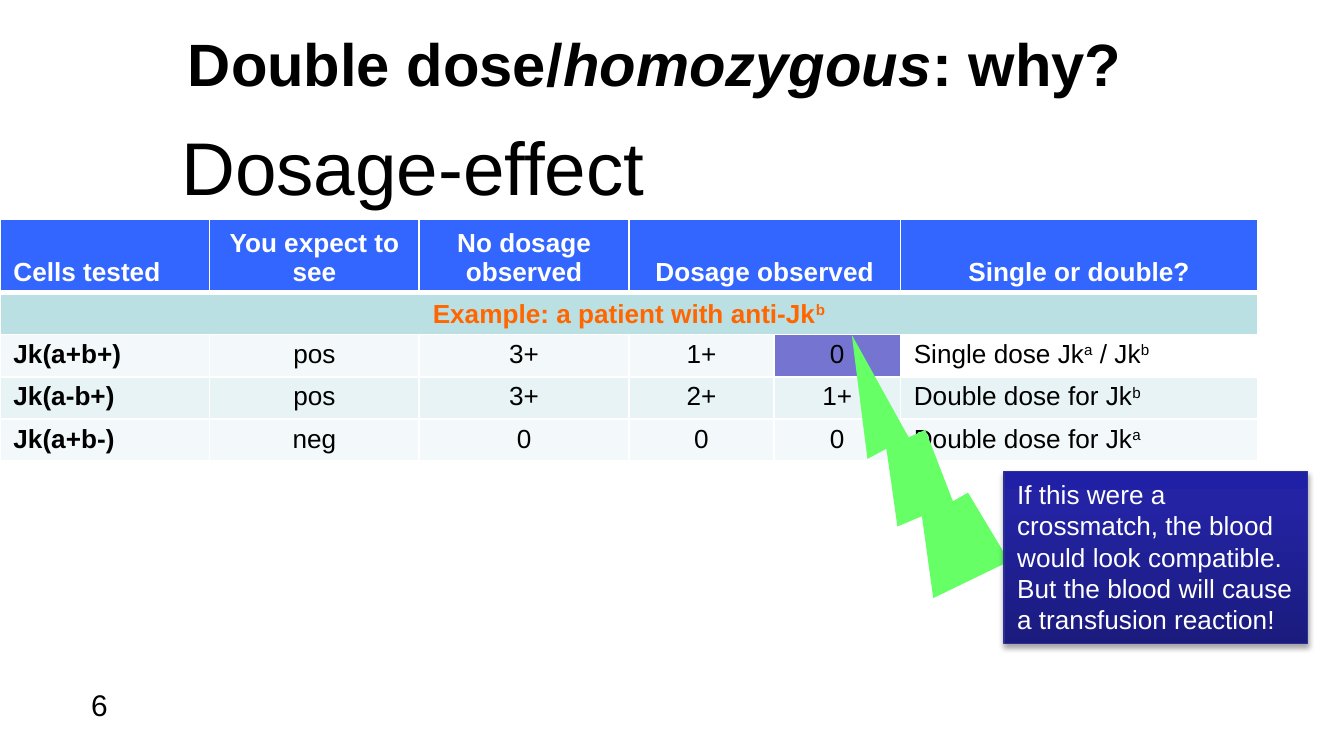
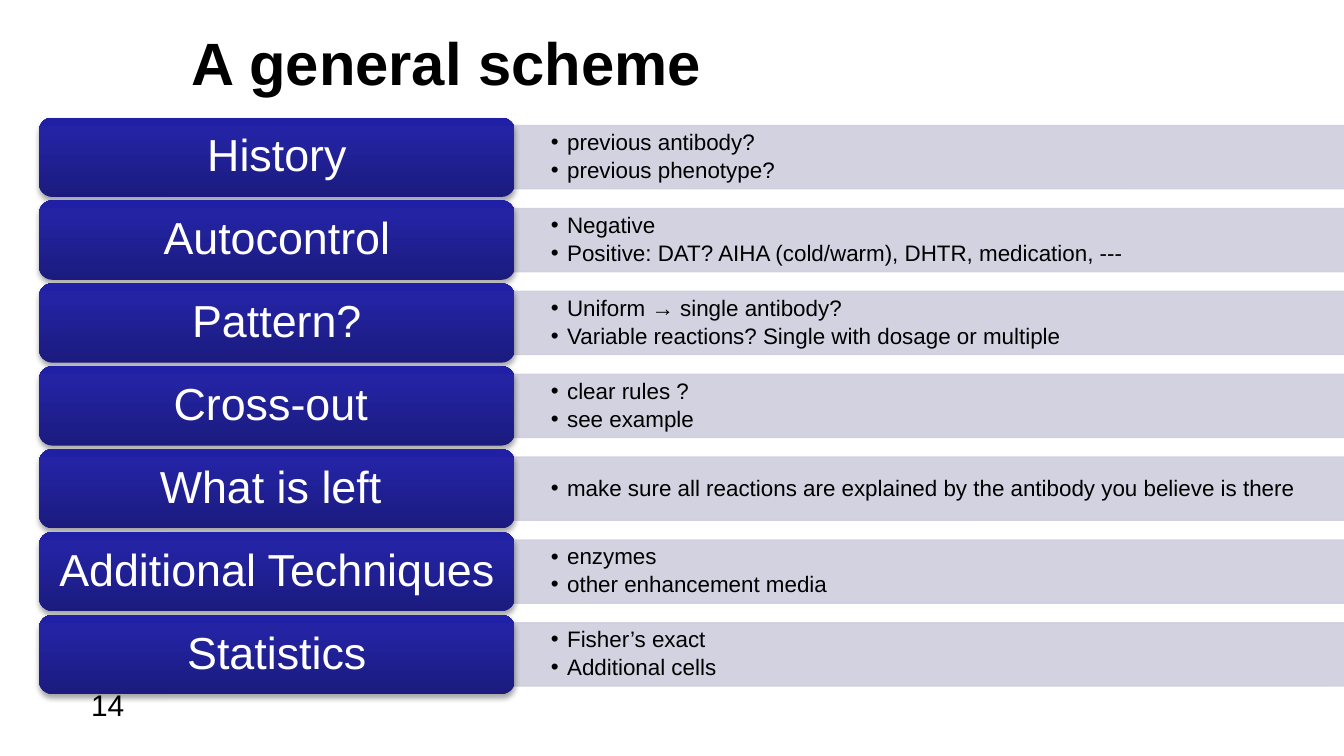
from lxml import etree
from pptx import Presentation, util as u
from pptx.dml.color import RGBColor
from pptx.enum import shapes, text
from pptx.oxml import ns

FONT = "Arial"
BLACK, WHITE = "000000", "FFFFFF"
HEADER_BLUE, BAND_TEAL, ORANGE = "3366FF", "BBE0E3", "FF6600"
ROW_LIGHT, ROW_DARK, HIGHLIGHT = "F3F9FA", "E7F3F4", "7575D1"
BOLT_GREEN, BAR_GREY, PANEL_LINE = "66FF66", "CECEDE", "2F2F98"
PANEL_STOPS = [(0, "1B1B7E"), (80, "2323A3"), (100, "2020A6")]

COLUMN_WIDTHS = [1.56, 1.56, 1.56, 1.08, 0.94, 2.66]
ROW_HEIGHTS = [0.52, 0.3, 0.3, 0.3, 0.3]
# Text between carets is superscript; an empty string is part of a merged cell.
DOSAGE_ROWS = [
    ["Cells tested", "You expect to see", "No dosage observed", "Dosage observed", "", "Single or double?"],
    ["Example: a patient with anti-Jk^b^", "", "", "", "", ""],
    ["Jk(a+b+)", "pos", "3+", "1+", "0", "Single dose Jk^a^ / Jk^b^"],
    ["Jk(a-b+)", "pos", "3+", "2+", "1+", "Double dose for Jk^b^"],
    ["Jk(a+b-)", "neg", "0", "0", "0", "Double dose for Jk^a^"],
]

SCHEME = [
    ("History", ["previous antibody?", "previous phenotype?"]),
    ("Autocontrol", ["Negative", "Positive: DAT? AIHA (cold/warm), DHTR, medication, ---"]),
    ("Pattern?", ["Uniform → single antibody?", "Variable reactions? Single with dosage or multiple"]),
    ("Cross-out ", ["clear rules ?", "see example"]),
    ("What is left ", ["make sure all reactions are explained by the antibody you believe is there"]),
    ("Additional Techniques", ["enzymes", "other enhancement media"]),
    ("Statistics", ["Fisher’s exact", "Additional cells"]),
]


def rgb(value):
    return RGBColor.from_string(value)


def add_element(parent, tag, **attributes):
    element = etree.SubElement(parent, ns.qn(tag))
    for name, value in attributes.items():
        element.set(name, str(value))
    return element


def add_run(paragraph, words, size, color=BLACK, bold=False):
    run = paragraph.add_run()
    run.text = words
    font = run.font
    font.name, font.size, font.bold = FONT, u.Pt(size), bold
    font.color.rgb = rgb(color)
    return run


def add_marked_runs(paragraph, words, size, color, bold):
    """Add runs, raising the parts enclosed in carets."""
    for index, part in enumerate(words.split("^")):
        if part:
            run = add_run(paragraph, part, size, color, bold)
            if index % 2:
                run.font._element.set("baseline", "30000")


def add_text_box(slide, left, top, width, height, anchor=text.MSO_ANCHOR.TOP):
    box = slide.shapes.add_textbox(*map(u.Inches, (left, top, width, height)))
    frame = box.text_frame
    frame.word_wrap = True
    frame.vertical_anchor = anchor
    return frame


def add_title(slide, left, top, width, height, parts):
    """Add a bold title; every second part is italic."""
    frame = add_text_box(slide, left, top, width, height, text.MSO_ANCHOR.MIDDLE)
    for index, part in enumerate(parts):
        run = add_run(frame.paragraphs[0], part, 32, bold=True)
        run.font.italic = index % 2 == 1


def add_label(slide, left, top, width, height, words, size):
    frame = add_text_box(slide, left, top, width, height)
    frame.auto_size = text.MSO_AUTO_SIZE.SHAPE_TO_FIT_TEXT
    add_run(frame.paragraphs[0], words, size)


def add_slide(presentation, number):
    slide = presentation.slides.add_slide(presentation.slide_layouts[6])
    add_label(slide, 0.58, 5.06, 1.92, 0.37, number, 16)
    return slide


def add_plain_shape(slide, kind, left, top, width, height, color):
    shape = slide.shapes.add_shape(kind, *map(u.Inches, (left, top, width, height)))
    shape.shadow.inherit = False
    shape.fill.solid()
    shape.fill.fore_color.rgb = rgb(color)
    shape.line.fill.background()
    return shape


def add_panel(slide, kind, left, top, width, height):
    """Add a dark blue gradient shape with a soft shadow below it."""
    shape = add_plain_shape(slide, kind, left, top, width, height, PANEL_STOPS[0][1])
    shape.fill.gradient()
    shape.fill.gradient_angle = 90
    properties = shape._element.spPr
    stops = properties.find(".//" + ns.qn("a:gsLst"))
    for stop in list(stops):
        stops.remove(stop)
    for position, color in PANEL_STOPS:
        stop = add_element(stops, "a:gs", pos=position * 1000)
        add_element(stop, "a:srgbClr", val=color)
    shadow = add_element(properties.find(ns.qn("a:effectLst")), "a:outerShdw",
                         blurRad=u.Pt(3.1), dist=u.Pt(1.8), dir=5400000, rotWithShape=0)
    add_element(add_element(shadow, "a:srgbClr", val=BLACK), "a:alpha", val=35000)
    shape.text_frame.word_wrap = True
    return shape


def set_borders(cell, row):
    """Draw white borders, heavier under the header row."""
    properties = cell._tc.get_or_add_tcPr()
    heavy = {0: "a:lnB", 1: "a:lnT"}.get(row)
    for index, tag in enumerate(("a:lnL", "a:lnR", "a:lnT", "a:lnB")):
        line = etree.Element(ns.qn(tag), w=str(u.Pt(3 if tag == heavy else 1)))
        add_element(add_element(line, "a:solidFill"), "a:srgbClr", val=WHITE)
        properties.insert(index, line)


def cell_fill(row, column):
    if row < 2:
        return (HEADER_BLUE, BAND_TEAL)[row]
    if row == 2 and column >= 4:
        return HIGHLIGHT if column == 4 else None
    return ROW_DARK if row == 3 else ROW_LIGHT


def format_cell(cell, row, column, words):
    color = cell_fill(row, column)
    if color:
        cell.fill.solid()
        cell.fill.fore_color.rgb = rgb(color)
    else:
        cell.fill.background()
    set_borders(cell, row)
    cell.margin_left = cell.margin_right = u.Inches(0.1)
    cell.margin_top = cell.margin_bottom = u.Inches(0.04)
    cell.vertical_anchor = text.MSO_ANCHOR.BOTTOM if row < 2 else text.MSO_ANCHOR.TOP
    paragraph = cell.text_frame.paragraphs[0]
    left_aligned = row != 1 and (column == 0 or (column == 5 and row > 1))
    paragraph.alignment = text.PP_ALIGN.LEFT if left_aligned else text.PP_ALIGN.CENTER
    text_color = (WHITE, ORANGE)[row] if row < 2 else BLACK
    paragraph.font.size = u.Pt(14)
    add_marked_runs(paragraph, words, 14, text_color, row < 2 or column == 0)


def add_dosage_table(slide):
    frame = slide.shapes.add_table(
        len(ROW_HEIGHTS), len(COLUMN_WIDTHS), u.Inches(0), u.Inches(1.63),
        u.Inches(9.37), u.Inches(1.77))
    table = frame.table
    for column, width in zip(table.columns, COLUMN_WIDTHS):
        column.width = u.Inches(width)
    for row, height in zip(table.rows, ROW_HEIGHTS):
        row.height = u.Inches(height)
    for row, values in enumerate(DOSAGE_ROWS):
        for column, words in enumerate(values):
            format_cell(table.cell(row, column), row, column, words)
    table.cell(0, 3).merge(table.cell(0, 4))
    table.cell(1, 0).merge(table.cell(1, 5))


def add_bolt(slide):
    bolt = add_plain_shape(slide, shapes.MSO_SHAPE.LIGHTNING_BOLT, 6.11, 2.62, 1.35, 1.88, BOLT_GREEN)
    bolt.rotation = 121.6
    bolt._element.spPr.xfrm.set("flipH", "1")


def add_warning(slide):
    panel = add_panel(slide, shapes.MSO_SHAPE.RECTANGLE, 7.47, 3.51, 2.26, 1.28)
    panel.line.color.rgb = rgb(PANEL_LINE)
    panel.line.width = u.Pt(0.75)
    frame = panel.text_frame
    frame.vertical_anchor = text.MSO_ANCHOR.TOP
    sentences = ["If this were a crossmatch, the blood would look compatible.",
                 "But the blood will cause a transfusion reaction!"]
    for index, sentence in enumerate(sentences):
        paragraph = frame.add_paragraph() if index else frame.paragraphs[0]
        paragraph.alignment = text.PP_ALIGN.LEFT
        add_run(paragraph, sentence, 14, WHITE)


def add_bar(slide, middle):
    """Add a pale bar, turned so that its rounded corners face right."""
    length, thickness = 6.29, 0.47
    bar = add_plain_shape(slide, shapes.MSO_SHAPE.ROUND_2_SAME_RECTANGLE,
                          6.74, middle - length / 2, thickness, length, BAR_GREY)
    bar.rotation = 90
    bar.line.color.rgb = rgb(BAR_GREY)
    bar.line.width = u.Pt(0.75)
    for color in bar._element.spPr.iter(ns.qn("a:srgbClr")):
        add_element(color, "a:alpha", val=90000)


def add_bullets(slide, middle, points):
    height = 0.42
    frame = add_text_box(slide, 3.83, middle - height / 2, 6.27, height, text.MSO_ANCHOR.MIDDLE)
    frame.margin_left = frame.margin_right = u.Inches(0.27)
    frame.margin_top = frame.margin_bottom = u.Inches(0.14)
    for index, point in enumerate(points):
        paragraph = frame.add_paragraph() if index else frame.paragraphs[0]
        paragraph.level = 1
        paragraph.line_spacing = 0.9
        paragraph.space_after = u.Pt(2)
        properties = paragraph._p.get_or_add_pPr()
        properties.set("marL", str(u.Inches(0.12)))
        properties.set("indent", str(-u.Inches(0.12)))
        add_element(properties, "a:buFont", typeface=FONT)
        add_element(properties, "a:buChar", char="•")
        paragraph.font.size = u.Pt(12)
        add_run(paragraph, point, 12)


def add_step(slide, middle, name):
    height = 0.59
    button = add_panel(slide, shapes.MSO_SHAPE.ROUNDED_RECTANGLE, 0.29, middle - height / 2, 3.54, height)
    button.text_frame.vertical_anchor = text.MSO_ANCHOR.MIDDLE
    paragraph = button.text_frame.paragraphs[0]
    paragraph.alignment = text.PP_ALIGN.CENTER
    paragraph.line_spacing = 0.9
    add_run(paragraph, name, 24, WHITE)


def build_dosage_slide(presentation):
    slide = add_slide(presentation, "6")
    add_title(slide, 1.3, 0.2, 8.43, 0.53, ["Double dose/", "homozygous", ": why?"])
    add_label(slide, 1.25, 0.85, 3.86, 0.77, "Dosage-effect", 40)
    add_dosage_table(slide)
    add_bolt(slide)
    add_warning(slide)


def build_scheme_slide(presentation):
    slide = add_slide(presentation, "14")
    add_title(slide, 1.33, 0.23, 8.17, 0.46, ["A general scheme"])
    first, last = 1.17, 4.87
    pitch = (last - first) / (len(SCHEME) - 1)
    for index, (name, points) in enumerate(SCHEME):
        middle = first + index * pitch
        add_bar(slide, middle)
        add_bullets(slide, middle, points)
        add_step(slide, middle, name)


def main():
    presentation = Presentation()
    presentation.slide_width = u.Inches(10)
    presentation.slide_height = u.Inches(10 * 9 / 16)
    build_dosage_slide(presentation)
    build_scheme_slide(presentation)
    presentation.save("out.pptx")


if __name__ == "__main__":
    main()
